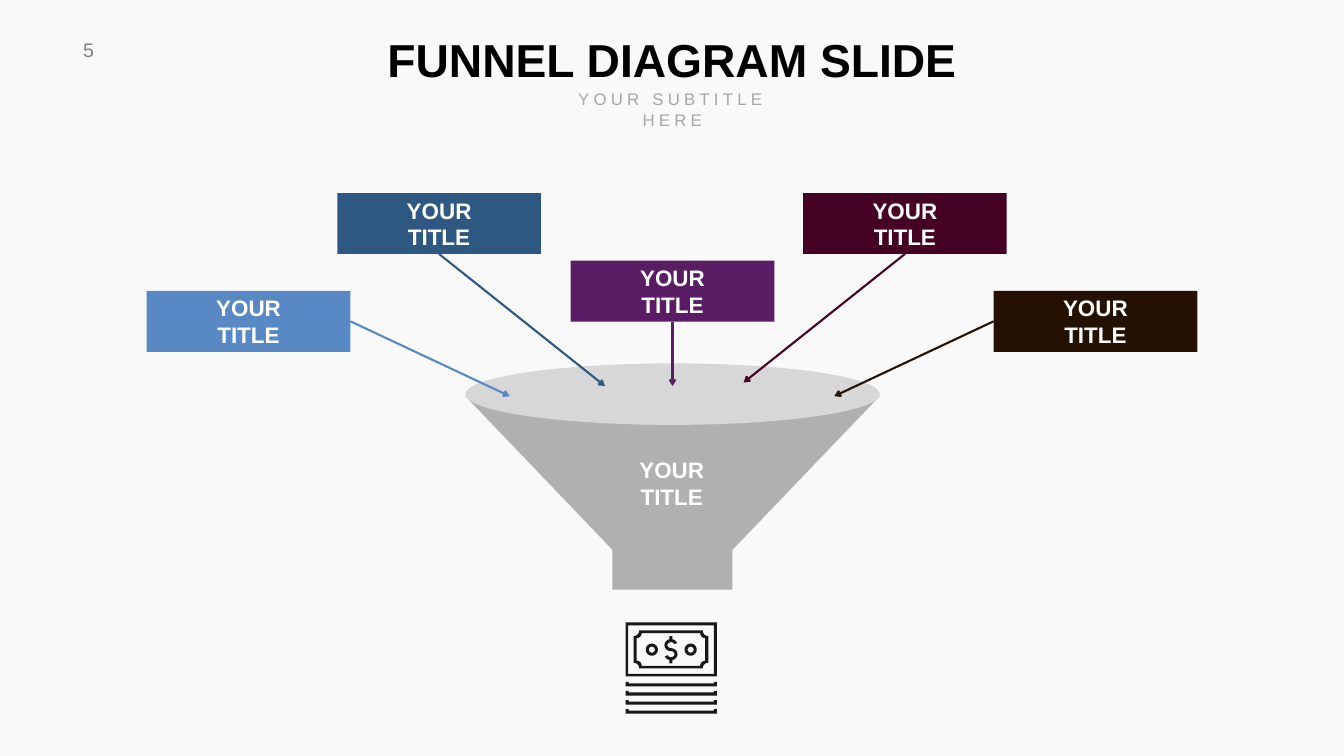
from dataclasses import dataclass
from math import cos, radians, sin

from lxml.etree import SubElement
from pptx import Presentation
from pptx.dml.color import RGBColor
from pptx.enum.shapes import MSO_CONNECTOR as Connector, MSO_SHAPE as Shape
from pptx.enum.text import MSO_ANCHOR as Anchor, MSO_AUTO_SIZE as AutoSize, PP_ALIGN as Align
from pptx.oxml.ns import qn
from pptx.util import Inches, Pt


@dataclass(frozen=True)
class Theme:
    font: str = "Arial"
    background: str = "F9F9F9"
    title: str = "000000"
    subtitle: str = "A6A6A6"
    number: str = "808080"
    label: str = "FFFFFF"
    funnel: str = "B0B0B0"
    rim: str = "D7D7D7"
    icon: str = "1A171B"
    title_size: int = 66
    number_size: int = 28
    subtitle_size: int = 24
    label_size: int = 32
    line_width: int = 3


THEME = Theme()
TOP, LEFT, BOTTOM, RIGHT = range(4)
CENTER = 13.34
BOX_W, BOX_H = 4.04, 1.21
INPUTS = [
    (2.91, 5.77, "5889C5", RIGHT, (10.11, 7.86)),
    (6.69, 3.83, "2E5882", BOTTOM, (12, 7.66)),
    (11.32, 5.17, "5A1C64", BOTTOM, (CENTER, 7.66)),
    (15.93, 3.83, "460224", BOTTOM, (14.75, 7.59)),
    (19.71, 5.77, "251102", LEFT, (16.55, 7.86)),
]


def rgb(color):
    return RGBColor.from_string(color)


def paint(sp, color):
    sp.shadow.inherit = False
    sp.fill.solid()
    sp.fill.fore_color.rgb = rgb(color)
    sp.line.fill.background()


def write(sp, text, size, color, bold=False, align=Align.CENTER,
          anchor=Anchor.TOP, wrap=True, spacing=0, inset=0.1):
    tf = sp.text_frame
    tf.auto_size = AutoSize.NONE
    tf.word_wrap = wrap
    tf.vertical_anchor = anchor
    tf.margin_left = tf.margin_right = Inches(inset)
    p = tf.paragraphs[0]
    p.alignment = align
    p.font.name = THEME.font
    p.font.size = Pt(size)
    p.font.bold = bold
    p.font.color.rgb = rgb(color)
    r = p.add_run()
    r.text = text
    if spacing:
        r.font._element.set("spc", str(spacing * 100))


def add_text(slide, box, text, size, color, **style):
    sp = slide.shapes.add_textbox(*map(Inches, box))
    write(sp, text, size, color, **style)


def add_title(slide, box, text):
    sp = slide.shapes.title
    sp.left, sp.top, sp.width, sp.height = map(Inches, box)
    write(sp, text, THEME.title_size, THEME.title, bold=True, wrap=False)


def add_shape(slide, kind, box, color):
    sp = slide.shapes.add_shape(kind, *map(Inches, box))
    paint(sp, color)
    return sp


def add_outline(slide, contours, color):
    builder = None
    for contour in contours:
        points = [(Inches(x), Inches(y)) for x, y in contour]
        if builder is None:
            builder = slide.shapes.build_freeform(*points[0])
        else:
            builder.move_to(*points[0])
        builder.add_line_segments(points[1:], close=True)
    paint(builder.convert_to_shape(), color)


def add_arrow(slide, box, side, end, color):
    line = slide.shapes.add_connector(Connector.STRAIGHT, 0, 0, *map(Inches, end))
    line.begin_connect(box, side)
    line.line.color.rgb = rgb(color)
    line.line.width = Pt(THEME.line_width)
    SubElement(line.line._get_or_add_ln(), qn("a:tailEnd"), type="arrow")
    SubElement(line._element.spPr, qn("a:effectLst"))


def arc(cx, cy, rx, ry, start, end, steps=16):
    angles = [radians(start + (end - start) * i / steps) for i in range(steps + 1)]
    return [(cx + rx * cos(a), cy + ry * sin(a)) for a in angles]


def rect(left, top, right, bottom):
    return [(left, top), (right, top), (right, bottom), (left, bottom)]


def plaque(left, top, right, bottom, notch):
    points = []
    for i, (x, y) in enumerate(rect(left, top, right, bottom)):
        points += arc(x, y, notch, notch, 90 * (i + 1), 90 * i)
    return points


def dollar(x, y):
    rx, ry, half = 0.1, 0.09, 0.03

    def side(offset):
        upper = arc(x, y - ry, rx + offset, ry + offset, -20, -270)
        lower = arc(x, y + ry, rx - offset, ry - offset, -90, 160)
        return upper + lower

    return [
        side(half) + side(-half)[::-1],
        rect(x - half, y - 0.27, x + half, y - 0.21),
        rect(x - half, y + 0.21, x + half, y + 0.27),
    ]


def stacked_note(top):
    left, right, edge = 12.41, 14.22, 0.06
    return [
        (left, top), (left + edge, top), (left + edge, top + 0.03),
        (right - edge, top + 0.03), (right - edge, top), (right, top),
        (right, top + 0.09), (left, top + 0.09),
    ]


def add_money_icon(slide):
    contours = [
        rect(12.41, 12.35, 14.22, 13.42),
        rect(12.46, 12.41, 14.16, 13.37),
        plaque(12.57, 12.51, 14.05, 13.26, 0.11),
        plaque(12.63, 12.56, 13.99, 13.21, 0.1),
    ]
    for x in (12.93, 13.7):
        contours += [arc(x, 12.89, r, r, 0, 360, 32) for r in (0.12, 0.06)]
    contours += dollar(13.31, 12.89)
    contours += [stacked_note(13.53 + 0.18 * i) for i in range(4)]
    add_outline(slide, contours, THEME.icon)


def add_funnel(slide):
    half = [(4.11, 7.86), (1.19, 10.91), (1.19, 11.7)]
    body = [(CENTER - x, y) for x, y in half] + [(CENTER + x, y) for x, y in half[::-1]]
    add_outline(slide, [body], THEME.funnel)
    add_shape(slide, Shape.OVAL, (CENTER - 4.11, 7.21, 8.22, 1.22), THEME.rim)


def add_input(slide, left, top, color, side, end, label):
    box = add_shape(slide, Shape.RECTANGLE, (left, top, BOX_W, BOX_H), color)
    write(box, inset=0.75, **label)
    add_arrow(slide, box, side, end, color)


def main():
    prs = Presentation()
    prs.slide_width, prs.slide_height = Inches(26.66), Inches(15)
    slide = prs.slides.add_slide(prs.slide_layouts[5])
    slide.background.fill.solid()
    slide.background.fill.fore_color.rgb = rgb(THEME.background)

    label = dict(text="YOUR TITLE", size=THEME.label_size, color=THEME.label,
                 bold=True, anchor=Anchor.MIDDLE)
    add_text(slide, (1.55, 0.71, 0.84, 0.57), "5", THEME.number_size,
             THEME.number, align=Align.LEFT, wrap=False, spacing=3)
    add_title(slide, (7.5, 0.58, 11.66, 1.21), "FUNNEL DIAGRAM SLIDE")
    add_text(slide, (10.73, 1.72, 5.21, 0.5), "YOUR SUBTITLE HERE",
             THEME.subtitle_size, THEME.subtitle, spacing=6)
    add_funnel(slide)
    for item in INPUTS:
        add_input(slide, *item, label)
    add_money_icon(slide)
    add_text(slide, (11.93, 9.26, 2.79, 0.64), **label)
    prs.save("out.pptx")


if __name__ == "__main__":
    main()
